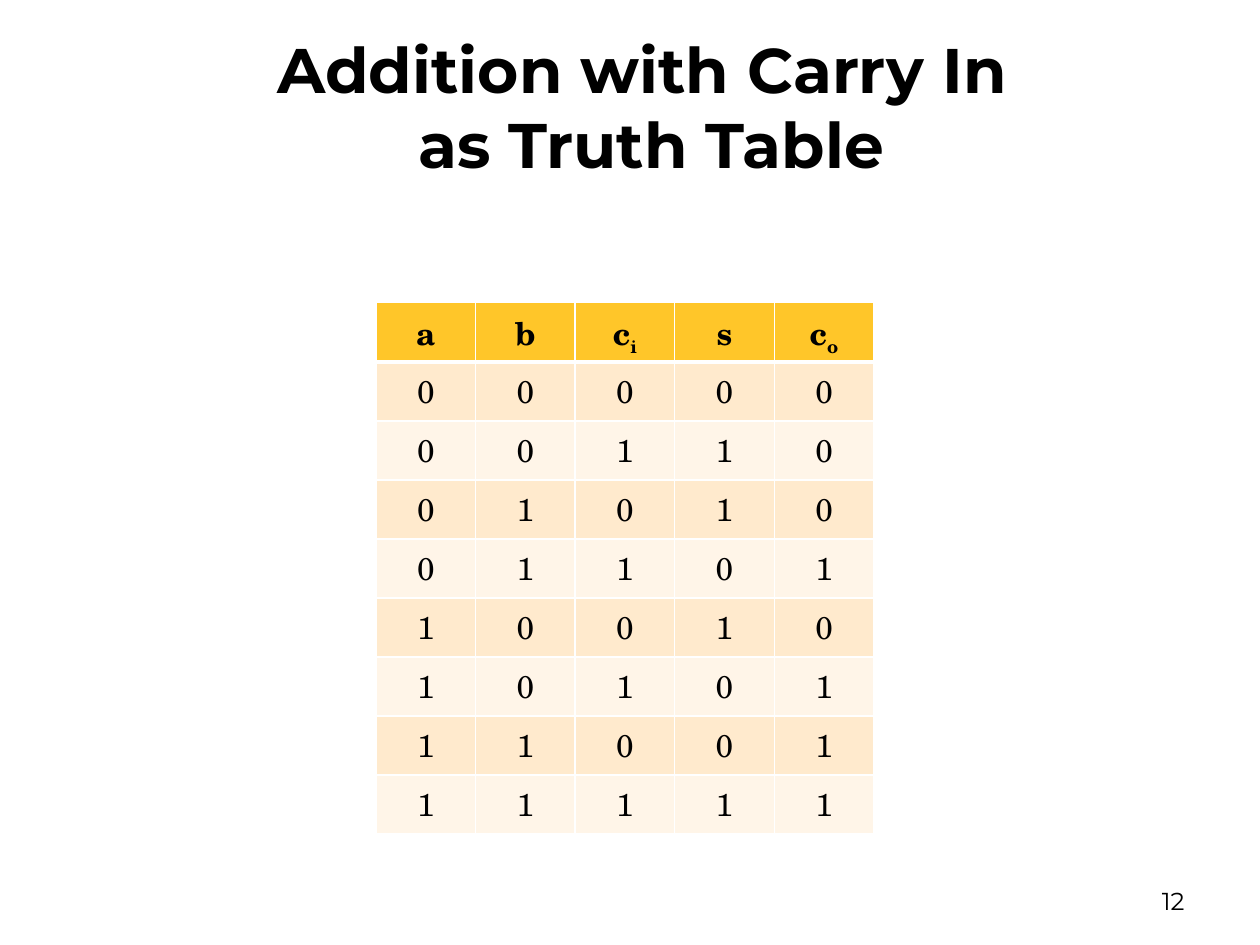
import dataclasses
import itertools

import pptx
import pptx.dml.color
import pptx.enum.text
import pptx.oxml
import pptx.oxml.ns
import pptx.util

PX_PER_INCH = 126
ALIGN = pptx.enum.text.PP_ALIGN


@dataclasses.dataclass(frozen=True)
class Theme:
    ink: str = "000000"
    rule: str = "FFFFFF"
    header_fill: str = "FFC629"
    band_fills: tuple = ("FFEACD", "FFF5E8")
    sans: str = "Montserrat"
    serif: str = "TeX Gyre Schola"
    title_size: int = 36
    number_size: int = 14
    table_size: int = 18
    thin_rule: int = 1
    thick_rule: int = 3


THEME = Theme()

# Each heading is a letter and its subscript.
HEADINGS = [("a", ""), ("b", ""), ("c", "i"), ("s", ""), ("c", "o")]


def px(length):
    return pptx.util.Emu(round(length * 914400 / PX_PER_INCH))


def rgb(value):
    return pptx.dml.color.RGBColor.from_string(value)


def add_run(paragraph, text, font_name, size, bold=False):
    run = paragraph.add_run()
    run.text = text
    run.font.name = font_name
    run.font.size = pptx.util.Pt(size)
    run.font.bold = bold
    run.font.color.rgb = rgb(THEME.ink)
    return run


def add_text(slide, box, lines, size, alignment, bold=False):
    """Add a vertically centred text box whose lines share one paragraph."""
    frame = slide.shapes.add_textbox(*map(px, box)).text_frame
    frame.word_wrap = True
    frame.vertical_anchor = pptx.enum.text.MSO_ANCHOR.MIDDLE
    paragraph = frame.paragraphs[0]
    paragraph.alignment = alignment
    for index, line in enumerate(lines):
        if index:
            paragraph.add_line_break()
        add_run(paragraph, line, THEME.sans, size, bold)


def set_borders(cell, top, bottom):
    """Rule all four sides; top and bottom are widths in points."""
    properties = cell._tc.get_or_add_tcPr()
    widths = {"L": THEME.thin_rule, "R": THEME.thin_rule, "T": top, "B": bottom}
    for side, width in widths.items():
        properties.append(pptx.oxml.parse_xml(
            f'<a:ln{side} {pptx.oxml.ns.nsdecls("a")} w="{pptx.util.Pt(width)}">'
            f'<a:solidFill><a:srgbClr val="{THEME.rule}"/></a:solidFill>'
            f'</a:ln{side}>'
        ))


def fill_cell(cell, text, subscript, row):
    is_header = row == 0
    set_borders(
        cell,
        top=THEME.thick_rule if row == 1 else THEME.thin_rule,
        bottom=THEME.thick_rule if is_header else THEME.thin_rule,
    )
    cell.fill.solid()
    cell.fill.fore_color.rgb = rgb(
        THEME.header_fill if is_header else THEME.band_fills[(row - 1) % 2])
    paragraph = cell.text_frame.paragraphs[0]
    paragraph.alignment = ALIGN.CENTER
    add_run(paragraph, text, THEME.serif, THEME.table_size, is_header)
    if subscript:
        index_run = add_run(
            paragraph, subscript, THEME.serif, THEME.table_size, is_header)
        index_run.font._element.set("baseline", "-25000")


def truth_rows():
    """Yield a, b, carry in, sum and carry out for every input."""
    for bits in itertools.product((0, 1), repeat=3):
        carry_out, sum_bit = divmod(sum(bits), 2)
        yield [(str(bit), "") for bit in (*bits, sum_bit, carry_out)]


def add_truth_table(slide, left, top, width, header_height, row_height):
    rows = [HEADINGS, *truth_rows()]
    heights = [header_height] + [row_height] * (len(rows) - 1)
    table = slide.shapes.add_table(
        len(rows), len(HEADINGS),
        px(left), px(top), px(width), px(sum(heights)),
    ).table
    for row, (entries, height) in enumerate(zip(rows, heights)):
        table.rows[row].height = px(height)
        for column, (text, subscript) in enumerate(entries):
            fill_cell(table.cell(row, column), text, subscript, row)


def main():
    presentation = pptx.Presentation()
    presentation.slide_width = pptx.util.Inches(10)
    presentation.slide_height = pptx.util.Inches(7.5)
    slide = presentation.slides.add_slide(presentation.slide_layouts[6])

    add_text(slide, (63, 62, 1176, 88),
             ["Addition with Carry In ", "as Truth Table"],
             THEME.title_size, ALIGN.CENTER, bold=True)
    add_text(slide, (903, 876, 294, 50), ["12"],
             THEME.number_size, ALIGN.RIGHT)
    add_truth_table(slide, left=376, top=302, width=498,
                    header_height=60, row_height=59)

    presentation.save("out.pptx")


if __name__ == "__main__":
    main()
